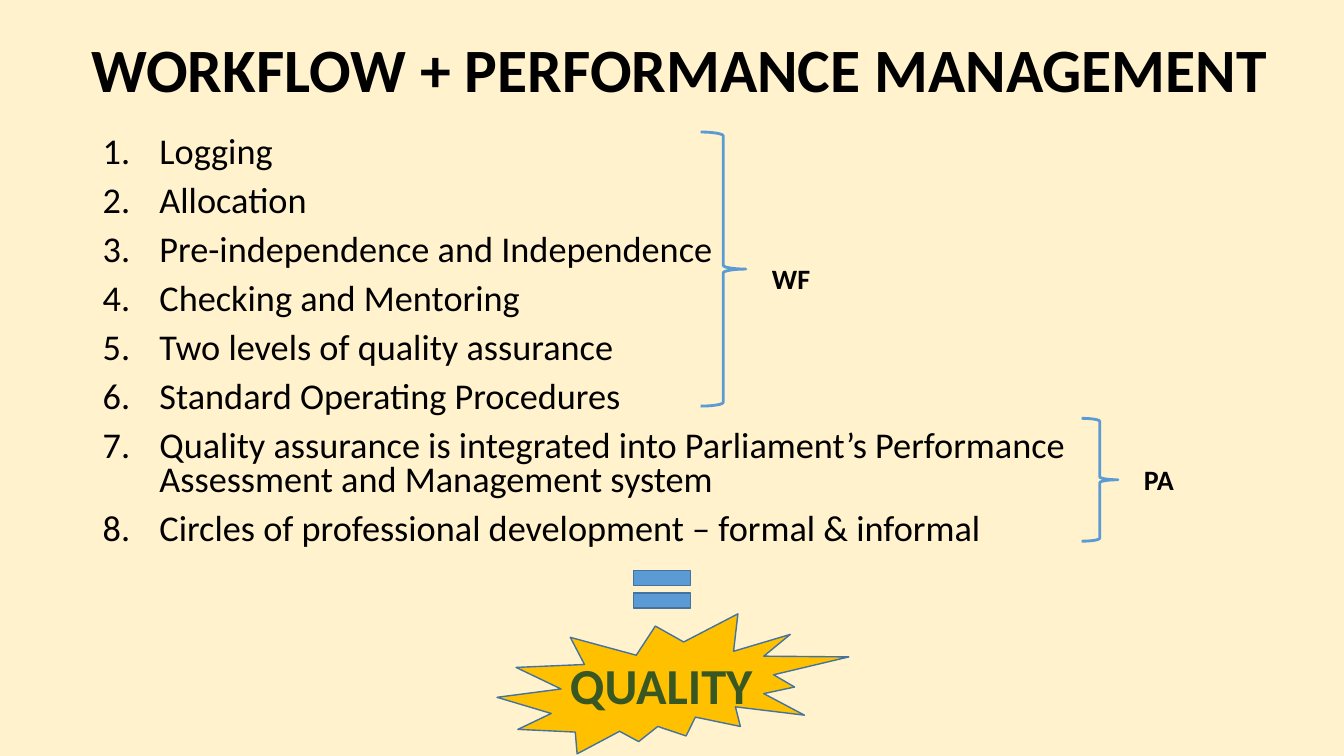
from lxml import etree
from pptx import Presentation
from pptx.dml import color
from pptx.enum import shapes, text
from pptx.oxml import ns
from pptx.util import Pt

FONT = "Calibri"
BLACK = "000000"
BLUE = "5B9BD5"
OUTLINE = "43739E"


def paint(target, value):
    target.rgb = color.RGBColor.from_string(value)


def style(paragraph, size, value, bold=False):
    paragraph.font.name = FONT
    paragraph.font.size = Pt(size)
    paragraph.font.bold = bold
    paint(paragraph.font.color, value)


deck = Presentation()
deck.slide_width, deck.slide_height = Pt(960), Pt(540)
page = deck.slides.add_slide(deck.slide_layouts[1])
page.background.fill.solid()
paint(page.background.fill.fore_color, "FFF2CC")

title, body = page.placeholders
frames = [(title, 51.8, 9.4, 867.6, 85), (body, 66.2, 94.3, 828, 303.8)]
for box, left, top, width, height in frames:
    box.left, box.top, box.width, box.height = Pt(left), Pt(top), Pt(width), Pt(height)
    box.text_frame.word_wrap = True
    box.text_frame.auto_size = text.MSO_AUTO_SIZE.NONE

title.text_frame.text = "WORKFLOW + PERFORMANCE MANAGEMENT"
title.text_frame.vertical_anchor = text.MSO_ANCHOR.MIDDLE
heading = title.text_frame.paragraphs[0]
heading.alignment = text.PP_ALIGN.CENTER
heading.line_spacing = 0.9
style(heading, 44, BLACK, True)

steps = [
    "Logging",
    "Allocation",
    "Pre-independence and Independence",
    "Checking and Mentoring",
    "Two levels of quality assurance",
    "Standard Operating Procedures",
    "Quality assurance is integrated into Parliament’s Performance Assessment and Management system",
    "Circles of professional development – formal & informal",
]
body.text_frame.text = "\n".join(steps)
for index, para in enumerate(body.text_frame.paragraphs):
    properties = para._p.get_or_add_pPr()
    properties.set("marL", str(Pt(40.5)))
    properties.set("indent", str(-Pt(40.5)))
    etree.SubElement(properties, ns.qn("a:buAutoNum"), type="arabicPeriod")
    para.line_spacing = 0.8
    para.space_before = Pt(10 if index else 0)
    style(para, 25.9, BLACK)

kinds = shapes.MSO_SHAPE
drawings = [
    (kinds.EXPLOSION2, 355, 438.5, 251.3, 100, "FFC000", OUTLINE, 1),
    (kinds.MATH_EQUAL, 445, 398.2, 55.4, 45.4, BLUE, OUTLINE, 1),
    (kinds.RIGHT_BRACE, 772.6, 298.8, 25.9, 87.8, None, BLUE, 2),
    (kinds.RIGHT_BRACE, 500.4, 94.3, 32.4, 195.8, None, BLUE, 2),
]
for kind, left, top, width, height, fill, line, weight in drawings:
    shape = page.shapes.add_shape(kind, Pt(left), Pt(top), Pt(width), Pt(height))
    shape.shadow.inherit = False
    if fill:
        shape.fill.solid()
        paint(shape.fill.fore_color, fill)
    else:
        shape.fill.background()
    paint(shape.line.color, line)
    shape.line.width = Pt(weight)

labels = [
    ("QUALITY", 135.4, 463.7, 673.9, 51.1, 36, "385723", text.PP_ALIGN.CENTER),
    ("WF", 544.3, 183.6, 61.9, 31.7, 20, BLACK, text.PP_ALIGN.LEFT),
    ("PA", 810, 326.9, 49.7, 31.7, 20, BLACK, text.PP_ALIGN.LEFT),
]
for wording, left, top, width, height, size, value, alignment in labels:
    box = page.shapes.add_textbox(Pt(left), Pt(top), Pt(width), Pt(height))
    box.text_frame.word_wrap = True
    box.text_frame.auto_size = text.MSO_AUTO_SIZE.SHAPE_TO_FIT_TEXT
    box.text_frame.text = wording
    para = box.text_frame.paragraphs[0]
    para.alignment = alignment
    style(para, size, value, True)

deck.save("out.pptx")
